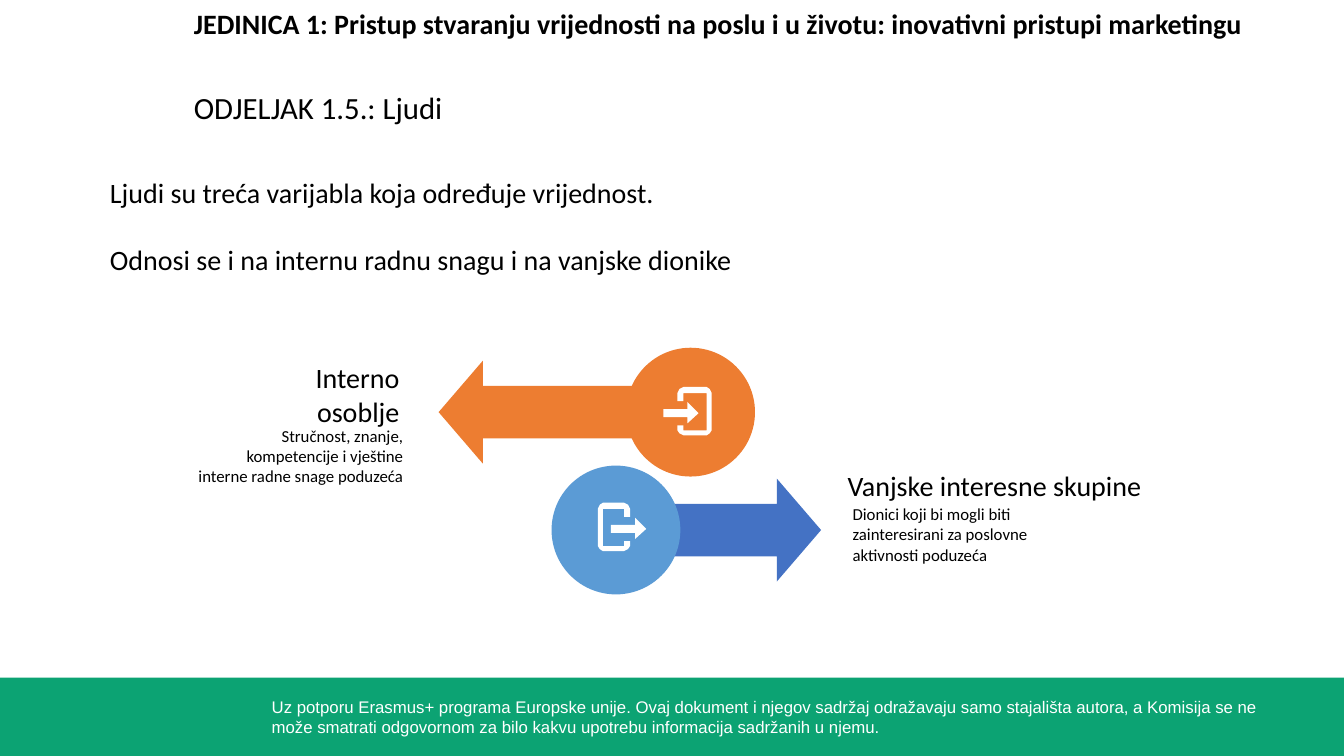
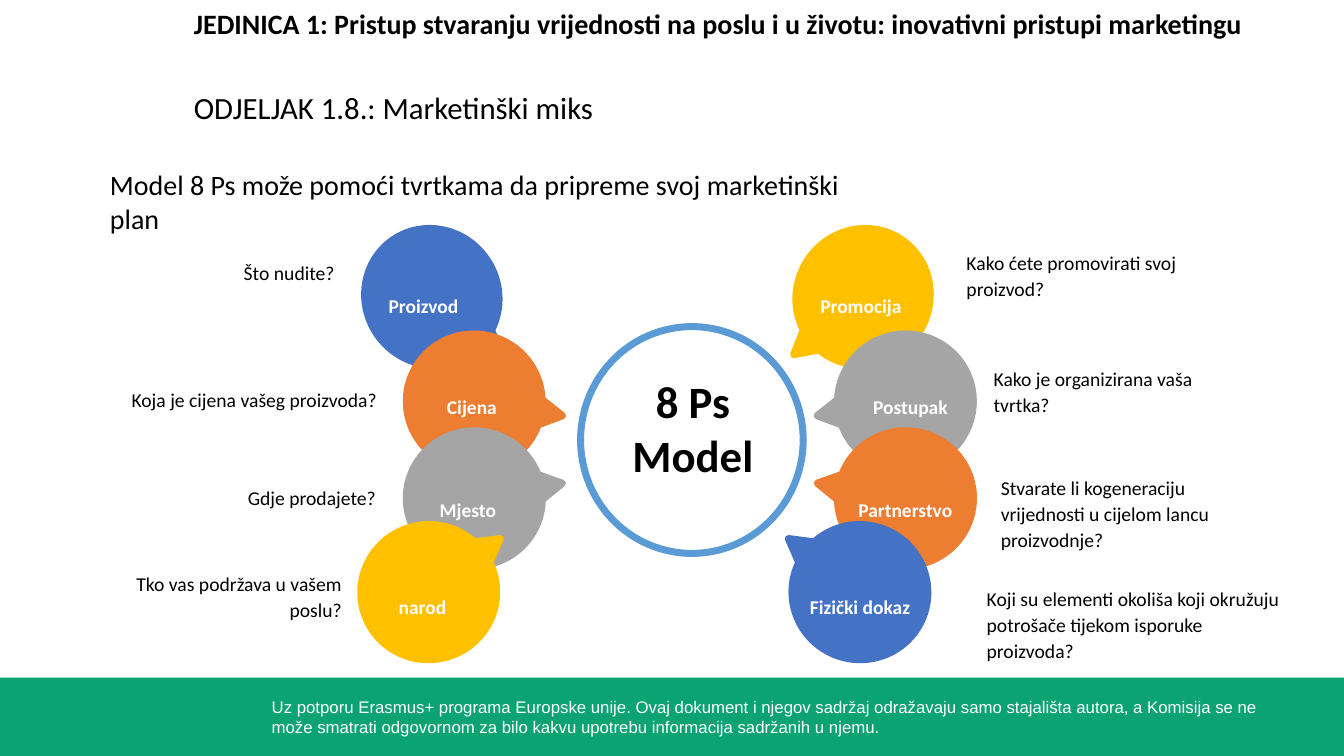
import pptx
import pptx.util
import pptx.dml.color
import pptx.enum.shapes
import pptx.enum.text
import pptx.oxml.ns
import lxml.etree

Pt = pptx.util.Pt
SHAPE = pptx.enum.shapes.MSO_SHAPE
ALIGN = pptx.enum.text.PP_ALIGN
LEFT, CENTER, RIGHT = ALIGN.LEFT, ALIGN.CENTER, ALIGN.RIGHT

# Shared colours, sizes and wording
WIDTH, HEIGHT = 960, 540
BLACK, WHITE, GREEN = "000000", "FFFFFF", "0CA373"
BLUE, SKY, ORANGE, GREY, YELLOW = "4472C4", "5B9BD5", "ED7D31", "A5A5A5", "FFC000"
UNIT = ("JEDINICA 1: Pristup stvaranju vrijednosti na poslu i u životu: "
        "inovativni pristupi marketingu")
FOOTER = ("Uz potporu Erasmus+ programa Europske unije. Ovaj dokument i njegov sadržaj "
          "odražavaju samo stajališta autora, a Komisija se ne može smatrati odgovornom "
          "za bilo kakvu upotrebu informacija sadržanih u njemu.")

# Icon outlines on a 48-unit grid
ICON_UNIT = Pt(0.72)
DOOR = [(26, 43), (5, 43), (5, 6), (26, 6), (26, 14), (32, 14), (32, 6), (30, 2),
        (26, 0), (5, 0), (2, 2), (0, 6), (0, 43), (2, 46), (5, 48), (26, 48),
        (30, 46), (32, 43), (32, 38), (26, 38)]
ICON_ARROW = [(48, 26), (37, 15), (37, 22), (13, 22), (13, 30), (37, 30), (37, 36)]


def rgb(value):
    return pptx.dml.color.RGBColor.from_string(value)


def paint(sp, fill, line=None, weight=5):
    sp.shadow.inherit = False
    sp.fill.solid()
    sp.fill.fore_color.rgb = rgb(fill)
    if line:
        sp.line.color.rgb = rgb(line)
        sp.line.width = Pt(weight)
    else:
        sp.line.fill.background()


def add_shape(slide, kind, box, fill, line=None):
    sp = slide.shapes.add_shape(kind, *map(Pt, box))
    paint(sp, fill, line)
    return sp


def write(sp, text, size, color=BLACK, bold=False, align=LEFT, font="Calibri",
          margins=(7.2, 3.6), spacing=1.0, gap=0):
    tf = sp.text_frame
    tf.text = text
    tf.word_wrap = True
    tf.auto_size = pptx.enum.text.MSO_AUTO_SIZE.NONE
    tf.vertical_anchor = pptx.enum.text.MSO_ANCHOR.TOP
    tf.margin_left = tf.margin_right = Pt(margins[0])
    tf.margin_top = tf.margin_bottom = Pt(margins[1])
    for i, p in enumerate(tf.paragraphs):
        p.alignment = align
        p.line_spacing = spacing
        p.space_before = Pt(gap if i else 0)
        for r in p.runs:
            r.font.name = font
            r.font.size = Pt(size)
            r.font.bold = bold
            r.font.color.rgb = rgb(color)


def add_text(slide, box, text, size, **style):
    sp = slide.shapes.add_textbox(*map(Pt, box))
    write(sp, text, size, **style)
    return sp


def fill_placeholder(sp, box, text, size, **style):
    sp.left, sp.top, sp.width, sp.height = map(Pt, box)
    write(sp, text, size, **style)
    for p in sp.text_frame.paragraphs:
        pPr = p._p.get_or_add_pPr()
        pPr.set("marL", "0")
        pPr.set("indent", "0")
        lxml.etree.SubElement(pPr, pptx.oxml.ns.qn("a:buNone"))


def add_base_slide(prs, section, intro, intro_box):
    """Footer band, unit heading, section title and introduction."""
    slide = prs.slides.add_slide(prs.slide_layouts[1])
    add_shape(slide, SHAPE.RECTANGLE, (0, 484, WIDTH, 56), GREEN)
    add_text(slide, (187, 494, 750, 36), FOOTER, 12, color=WHITE, font="Arial")
    add_text(slide, (138.5, 3.6, 784, 25), UNIT, 20, bold=True, margins=(0, 0.7))
    fill_placeholder(slide.shapes.title, (138.5, 62, 752, 28), section, 22,
                     margins=(0, 1.4))
    fill_placeholder(slide.placeholders[1], intro_box, intro, 20, gap=24)
    return slide


def add_icon(slide, x, y, inward):
    door, arrow = DOOR, ICON_ARROW
    if inward:
        door = [(48 - px * 34 / 32, py) for px, py in DOOR]
        arrow = [(px - 13, py) for px, py in ICON_ARROW]
    fb = slide.shapes.build_freeform(*door[0], scale=ICON_UNIT)
    fb.add_line_segments(door[1:])
    fb.move_to(*arrow[0])
    fb.add_line_segments(arrow[1:])
    paint(fb.convert_to_shape(Pt(x), Pt(y)), WHITE)


def add_group_arrow(slide, x, y, inward, arrow_color, disc_color):
    """Arrow with a disc at its tail; x, y is the corner of the disc."""
    disc, length, head = 92, 157, 73.5
    kind = SHAPE.LEFT_ARROW if inward else SHAPE.RIGHT_ARROW
    left = x + 23 - length if inward else x + 192.5 - 112
    width = length if inward else 112
    sp = add_shape(slide, kind, (left, y + (disc - head) / 2, width, head), arrow_color)
    sp.adjustments[0] = 0.51
    sp.adjustments[1] = 0.43
    add_shape(slide, SHAPE.OVAL, (x, y, disc, disc), disc_color)
    add_icon(slide, x + (26.5 if inward else 33), y + (28 if inward else 26.5), inward)


def add_caption(slide, x, y, width, heading, detail, detail_box, align):
    """Heading with a smaller text placed relative to it."""
    dx, dy, detail_width, detail_height = detail_box
    add_text(slide, (x, y, width, 32), heading, 20, align=align)
    add_text(slide, (x + dx, y + dy, detail_width, detail_height), detail, 12, align=align)


def add_bubbles(slide, x, y, colors, mirrored):
    """Column of four callouts pointing at the centre."""
    places = [(3, 0, 95, 98.6, 32.4), (32.5, 75.6, 96.5, 97.2, 62.6),
              (32.5, 144.7, 96.5, 97.2, 81.4), (0, 211.7, 96.5, 97.2, 108.5)]
    for (dx, dy, w, h, angle), color in zip(places, colors):
        sp = add_shape(slide, SHAPE.OVAL_CALLOUT, (x + dx, y + dy, w, h), color, color)
        sp.adjustments[0] = -0.208
        sp.adjustments[1] = 0.625
        sp.rotation = 360 - angle if mirrored else angle
        if mirrored:
            sp._element.spPr.find(pptx.oxml.ns.qn("a:xfrm")).set("flipH", "1")


def add_bubble_texts(slide, x, y, rows, align):
    """Raised label in each bubble and the question beside it."""
    label_tops = (40.6, 113.1, 186.5, 256)
    for label_top, (label, label_dx, question, dx, dy, width) in zip(label_tops, rows):
        sp = add_text(slide, (x + label_dx, y + label_top, 101, 27), label, 24,
                      color=WHITE, bold=True, align=CENTER)
        sp.text_frame.paragraphs[0].runs[0].font._element.set("baseline", "30000")
        add_text(slide, (x + dx, y + dy, width, 42), question, 14, align=align,
                 spacing=1.1)


def people_slide(prs):
    slide = add_base_slide(
        prs, "ODJELJAK 1.5.: Ljudi",
        "Ljudi su treća varijabla koja određuje vrijednost.\n"
        "Odnosi se i na internu radnu snagu i na vanjske dionike",
        (71.3, 121.7, 805, 80))
    add_group_arrow(slide, 447.3, 248.4, True, ORANGE, ORANGE)
    add_group_arrow(slide, 394, 332.6, False, BLUE, SKY)
    add_caption(slide, 175, 254.2, 117.4, "Interno osoblje",
                "Stručnost, znanje, kompetencije i vještine interne radne snage poduzeća",
                (-43.2, 46, 163.4, 65), RIGHT)
    add_caption(slide, 598.3, 331.2, 228, "Vanjske interesne skupine",
                "Dionici koji bi mogli biti zainteresirani za poslovne aktivnosti poduzeća",
                (3.6, 25.2, 163.4, 51), LEFT)


def mix_slide(prs):
    slide = add_base_slide(
        prs, "ODJELJAK 1.8.: Marketinški miks",
        "Model 8 Ps može pomoći tvrtkama da pripreme svoj marketinški plan",
        (71.3, 116, 557, 56))
    # Centre ring
    add_shape(slide, SHAPE.OVAL, (414.7, 233.3, 159, 162), WHITE, SKY)
    add_text(slide, (444.2, 263.5, 101.5, 85), "8 Ps\nModel", 32, bold=True, align=CENTER)
    # Bubble columns
    left, right, top = 258, 566, 162.7
    add_bubbles(slide, right, top, (YELLOW, GREY, ORANGE, BLUE), False)
    add_bubbles(slide, left, top, (BLUE, ORANGE, GREY, YELLOW), True)
    add_bubble_texts(slide, left, top, [
        ("Proizvod", -6, "Što nudite?", -203.3, 18.7, 191.5),
        ("Cijena", 28.6, "Koja je cijena vašeg proizvoda?", -173, 109.5, 191.5),
        ("Mjesto", 25.7, "Gdje prodajete?", -173.8, 179.3, 191.5),
        ("narod", -6.7, "Tko vas podržava u vašem poslu?", -198.2, 240.5, 191.5),
    ], RIGHT)
    add_bubble_texts(slide, right, top, [
        ("Promocija", -1.5, "Kako ćete promovirati svoj proizvod?", 117.3, 11.5, 191.5),
        ("Postupak", 33.8, "Kako je organizirana vaša tvrtka?", 136.7, 94.3, 191.5),
        ("Partnerstvo", 30.2,
         "Stvarate li kogeneraciju vrijednosti u cijelom lancu proizvodnje?",
         141.8, 172.1, 191.5),
        ("Fizički dokaz", -2.2,
         "Koji su elementi okoliša koji okružuju potrošače tijekom isporuke proizvoda?",
         131.7, 251.3, 234),
    ], LEFT)


def main():
    prs = pptx.Presentation()
    prs.slide_width, prs.slide_height = Pt(WIDTH), Pt(HEIGHT)
    people_slide(prs)
    mix_slide(prs)
    prs.save("out.pptx")


if __name__ == "__main__":
    main()
